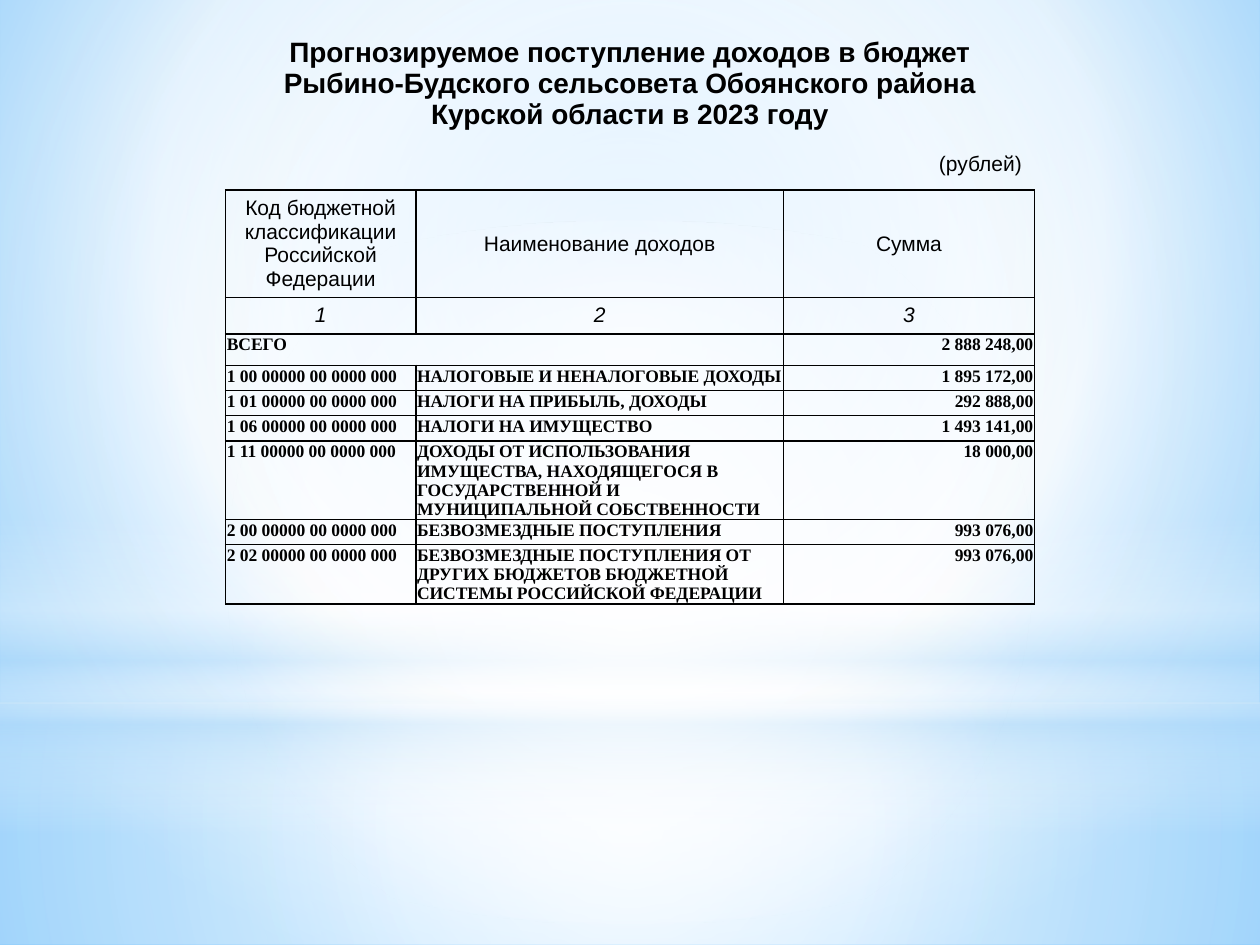
from lxml.etree import SubElement
from pptx import Presentation
from pptx.dml.color import RGBColor
from pptx.enum.shapes import MSO_SHAPE
from pptx.enum.text import MSO_ANCHOR, PP_ALIGN
from pptx.oxml.ns import qn
from pptx.util import Inches, Pt

# Content
TITLE = ("Прогнозируемое поступление доходов в бюджет Рыбино-Будского "
         "сельсовета Обоянского района Курской области в 2023 году")
UNIT = "(рублей)"
HEADERS = ["Код бюджетной классификации Российской Федерации",
           "Наименование доходов", "Сумма"]
NUMBERS = ["1", "2", "3"]
TOTAL = ("ВСЕГО", "2 888 248,00")
INCOMES = [
    ("1 00 00000 00 0000 000", "НАЛОГОВЫЕ И НЕНАЛОГОВЫЕ ДОХОДЫ", "1 895 172,00"),
    ("1 01 00000 00 0000 000", "НАЛОГИ НА ПРИБЫЛЬ, ДОХОДЫ", "292 888,00"),
    ("1 06 00000 00 0000 000", "НАЛОГИ НА ИМУЩЕСТВО", "1 493 141,00"),
    ("1 11 00000 00 0000 000",
     "ДОХОДЫ ОТ ИСПОЛЬЗОВАНИЯ ИМУЩЕСТВА, НАХОДЯЩЕГОСЯ В ГОСУДАРСТВЕННОЙ "
     "И МУНИЦИПАЛЬНОЙ СОБСТВЕННОСТИ", "18 000,00"),
    ("2 00 00000 00 0000 000", "БЕЗВОЗМЕЗДНЫЕ ПОСТУПЛЕНИЯ", "993 076,00"),
    ("2 02 00000 00 0000 000",
     "БЕЗВОЗМЕЗДНЫЕ ПОСТУПЛЕНИЯ ОТ ДРУГИХ БЮДЖЕТОВ БЮДЖЕТНОЙ СИСТЕМЫ "
     "РОССИЙСКОЙ ФЕДЕРАЦИИ", "993 076,00"),
]
COLUMN_WIDTHS = [1.51, 1.65, 1.27, 1.99]
ROW_HEIGHTS = [0.85, 0.42, 0.85, 0.29, 0.25, 0.2, 0.2, 0.2, 0.62, 0.2, 0.47]
NO_STYLE = "{2D5ABB26-0587-4C30-8999-92F81FD0307C}"

# Background: stops are (position %, colour, opacity %)
BACKGROUND = [(0, "9ED5FF", 100), (60, "FFFFFF", 100), (100, "5BB9FF", 100)]
CENTRE = (50, 50, 50, 50)
GLOWS = [  # shape, top, height, stops, focus (None for a vertical gradient)
    (MSO_SHAPE.RECTANGLE, 5.58, 1.92,
     [(0, "FFFFFF", 91), (37, "FFFFFF", 76), (100, "B4DCFA", 79)], CENTRE),
    (MSO_SHAPE.RECTANGLE, 0, 5.58,
     [(0, "FFFFFF", 89), (48, "FFFFFF", 62), (100, "B4DCFA", 79)], CENTRE),
    (MSO_SHAPE.RECTANGLE, 4.12, 2.5,
     [(0, "FFFFFF", 0), (29, "FFFFFF", 30), (45, "B4DCFA", 40),
      (55, "FFFFFF", 26), (65, "B4DCFA", 60), (100, "FFFFFF", 0)], None),
    (MSO_SHAPE.OVAL, 1.75, 5.58,
     [(0, "FFFFFF", 100), (56, "FFFFFF", 0)], CENTRE),
]


def color(hex_value):
    return RGBColor.from_string(hex_value)


def set_gradient(fill, owner, stops, focus):
    fill.gradient()
    gradient = owner.find(".//" + qn("a:gradFill"))
    for child in list(gradient):
        gradient.remove(child)
    stop_list = SubElement(gradient, qn("a:gsLst"))
    for position, hex_value, opacity in stops:
        stop = SubElement(stop_list, qn("a:gs"), pos=str(position * 1000))
        stop_color = SubElement(stop, qn("a:srgbClr"), val=hex_value)
        if opacity < 100:
            SubElement(stop_color, qn("a:alpha"), val=str(opacity * 1000))
    if focus is None:
        SubElement(gradient, qn("a:lin"), ang="5400000", scaled="0")
    else:
        circle = SubElement(gradient, qn("a:path"))
        circle.set("path", "circle")
        sides = {side: str(value * 1000) for side, value in zip("ltrb", focus)}
        SubElement(circle, qn("a:fillToRect"), sides)


def set_borders(cell, sides):
    properties = cell._tc.get_or_add_tcPr()
    for side in "LRTB":
        line = SubElement(properties, qn("a:ln" + side), w=str(Pt(1)))
        if side in sides:
            line_fill = SubElement(line, qn("a:solidFill"))
            SubElement(line_fill, qn("a:srgbClr"), val="000000")
        else:
            SubElement(line, qn("a:noFill"))


def write(cell, text, size, align, font="Arial", bold=False, italic=False):
    cell.text = text
    cell.vertical_anchor = MSO_ANCHOR.MIDDLE
    paragraph = cell.text_frame.paragraphs[0]
    paragraph.alignment = align
    run_font = paragraph.runs[0].font
    run_font.name, run_font.size = font, Pt(size)
    run_font.bold, run_font.italic = bold, italic
    run_font.color.rgb = color("000000")


def write_income(cell, text, align=PP_ALIGN.LEFT):
    write(cell, text, 10, align, "Times New Roman", bold=True)
    cell.vertical_anchor = MSO_ANCHOR.TOP
    cell.margin_left = cell.margin_right = cell.margin_top = Inches(0.01)
    cell.margin_bottom = 0


def main():
    presentation = Presentation()
    presentation.slide_width, presentation.slide_height = Inches(10), Inches(7.5)
    slide = presentation.slides.add_slide(presentation.slide_layouts[6])

    # Background and soft glows
    set_gradient(slide.background.fill, slide.element, BACKGROUND, (20, 10, 20, 60))
    for kind, top, height, stops, focus in GLOWS:
        glow = slide.shapes.add_shape(kind, 0, Inches(top), Inches(10), Inches(height))
        glow.shadow.inherit = False
        glow.line.fill.background()
        set_gradient(glow.fill, glow.element, stops, focus)

    # Table grid
    table = slide.shapes.add_table(
        len(ROW_HEIGHTS), len(COLUMN_WIDTHS), Inches(1.79), Inches(0.24),
        Inches(sum(COLUMN_WIDTHS)), Inches(sum(ROW_HEIGHTS))).table
    table.first_row = table.horz_banding = False
    table._tbl.tblPr.find(qn("a:tableStyleId")).text = NO_STYLE
    for column, width in zip(table.columns, COLUMN_WIDTHS):
        column.width = Inches(width)
    for index, (row, height) in enumerate(zip(table.rows, ROW_HEIGHTS)):
        row.height = Inches(height)
        for cell in row.cells:
            set_borders(cell, {0: "", 1: "B"}.get(index, "LRTB"))
            cell.fill.background()

    # Merged cells: title, total, and the name column below the headers
    table.cell(0, 0).merge(table.cell(0, 3))
    table.cell(4, 0).merge(table.cell(4, 2))
    for index in range(2, len(ROW_HEIGHTS)):
        if index != 4:
            table.cell(index, 1).merge(table.cell(index, 2))

    # Title, unit and headers
    write(table.cell(0, 0), TITLE, 16, PP_ALIGN.CENTER, bold=True)
    write(table.cell(1, 3), UNIT, 12, PP_ALIGN.RIGHT)
    for column, header, number in zip((0, 1, 3), HEADERS, NUMBERS):
        write(table.cell(2, column), header, 12, PP_ALIGN.CENTER)
        write(table.cell(3, column), number, 12, PP_ALIGN.CENTER, italic=True)

    # Total and incomes
    write_income(table.cell(4, 0), TOTAL[0])
    write_income(table.cell(4, 3), TOTAL[1], PP_ALIGN.RIGHT)
    for index, (code, name, amount) in enumerate(INCOMES, start=5):
        write_income(table.cell(index, 0), code)
        write_income(table.cell(index, 1), name)
        write_income(table.cell(index, 3), amount, PP_ALIGN.RIGHT)

    presentation.save("out.pptx")


if __name__ == "__main__":
    main()
